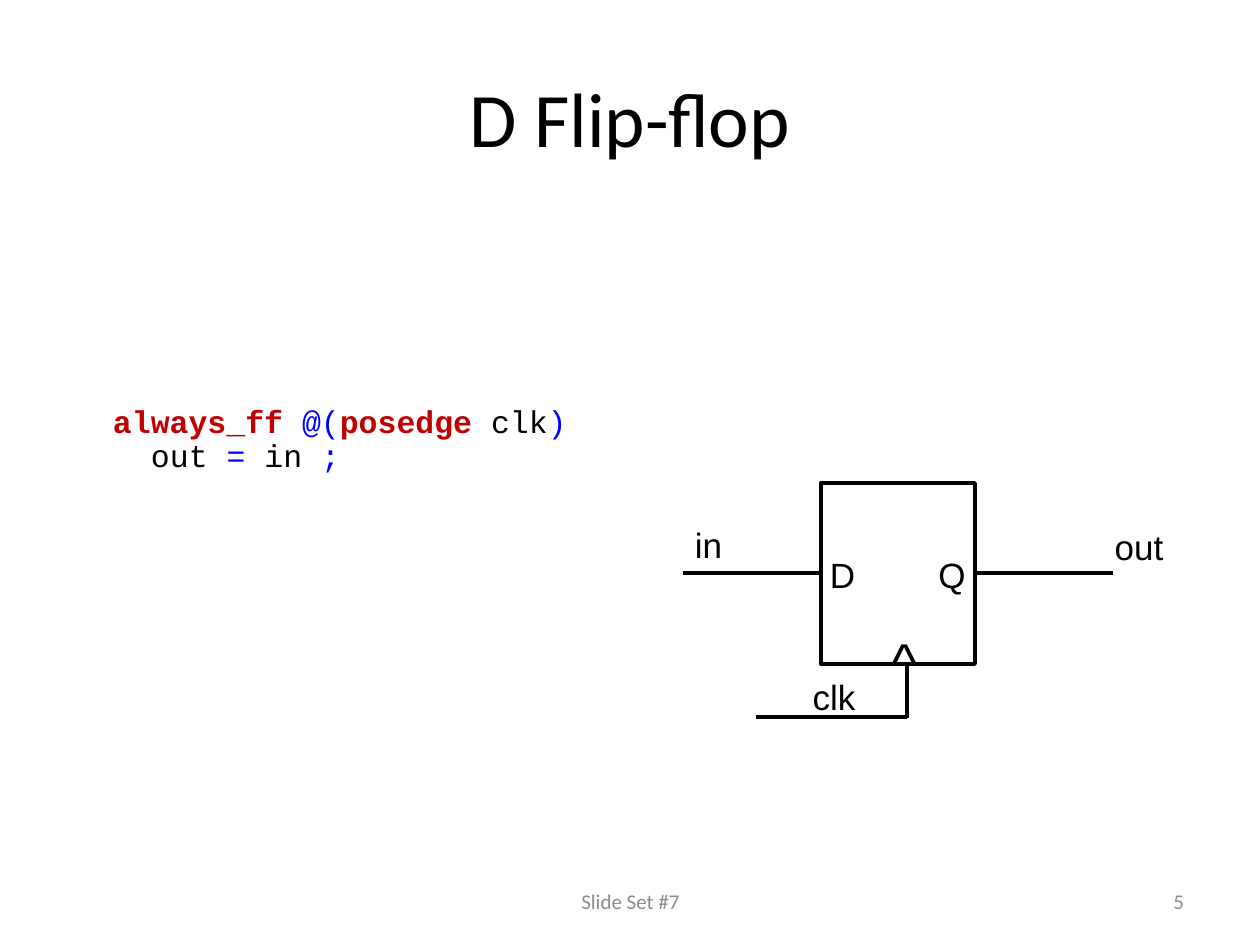
import pptx
import pptx.dml.color
import pptx.enum.shapes
import pptx.enum.text
import pptx.oxml.ns
import pptx.util
from lxml import etree

EMU_PER_PX = 914400 / 126
BLACK, RED, BLUE, GREY = "000000", "C00000", "0000FF", "8C8C8C"
ALIGN = pptx.enum.text.PP_ALIGN
ANCHOR = pptx.enum.text.MSO_ANCHOR


def px(n):
    return pptx.util.Emu(round(n * EMU_PER_PX))


def rgb(code):
    return pptx.dml.color.RGBColor.from_string(code)


def style_font(font, name, size, color, bold=False):
    font.name, font.size, font.bold = name, pptx.util.Pt(size), bold
    font.color.rgb = rgb(color)


def style_line(line):
    line.color.rgb = rgb(BLACK)
    line.width = pptx.util.Pt(2.25)


def add_frame(shapes, x, y, w, h, anchor=ANCHOR.MIDDLE, wrap=True):
    """Add an empty text box without insets and return its text frame."""
    tf = shapes.add_textbox(px(x), px(y), px(w), px(h)).text_frame
    tf.margin_left = tf.margin_right = tf.margin_top = tf.margin_bottom = 0
    tf.vertical_anchor, tf.word_wrap = anchor, wrap
    return tf


def add_label(shapes, box, text, size, font="Arial", color=BLACK,
              align=ALIGN.CENTER, wrap=True):
    tf = add_frame(shapes, *box, wrap=wrap)
    tf.text = text
    p = tf.paragraphs[0]
    p.alignment = align
    style_font(p.runs[0].font, font, size, color)


def add_wire(shapes, x1, y1, x2, y2):
    line = shapes.add_connector(pptx.enum.shapes.MSO_CONNECTOR.STRAIGHT,
                                px(x1), px(y1), px(x2), px(y2))
    style_line(line.line)
    etree.SubElement(line._element.spPr, pptx.oxml.ns.qn("a:effectLst"))


def add_code(s, x, y, w, h):
    lines = [
        (0, [("always_ff ", RED), ("@(", BLUE), ("posedge ", RED),
             ("clk", BLACK), (")", BLUE)]),
        (38, [("out ", BLACK), ("=", BLUE), (" in ", BLACK), (";", BLUE)]),
    ]
    tf = add_frame(s.shapes, x, y, w, h, ANCHOR.TOP, wrap=False)
    for i, (indent, tokens) in enumerate(lines):
        p = tf.add_paragraph() if i else tf.paragraphs[0]
        p.line_spacing = 0.9
        p._p.get_or_add_pPr().set("marL", str(px(indent)))
        for text, color in tokens:
            r = p.add_run()
            r.text = text
            style_font(r.font, "Courier New", 18, color, bold=color == RED)


def add_flip_flop(s, x, y, w, h):
    """Draw the register body in the given box, with its pins and wires."""
    shapes = s.shapes.add_group_shape().shapes
    sp = shapes.add_shape(pptx.enum.shapes.MSO_SHAPE.RECTANGLE,
                          px(x), px(y), px(w), px(h))
    sp.shadow.inherit = False
    sp.fill.background()
    style_line(sp.line)

    pins = [("D", 9, 70, 25, 42, 20), ("Q", 117, 70, 28, 42, 20),
            ("^", 71, 145, 26, 67, 32)]
    for text, dx, dy, pw, ph, size in pins:
        add_label(shapes, (x + dx, y + dy, pw, ph), text, size, wrap=False)

    mid, clk_x, clk_y, lead = y + h // 2, x + 86, y + h + 53, 138
    add_wire(shapes, x - lead, mid, x, mid)
    add_wire(shapes, x + w, mid, x + w + lead, mid)
    add_wire(shapes, clk_x, y + h, clk_x, clk_y + 1)
    add_wire(shapes, clk_x, clk_y, x - 65, clk_y)

    signals = [("clk", -24, 192, 74), ("in", -128, 40, 31),
               ("out", 284, 42, 68)]
    for text, dx, dy, sw in signals:
        add_label(shapes, (x + dx, y + dy, sw, 43), text, 20)


def add_footer(s, x, y, w, h):
    add_label(s.shapes, (x + 368, y, 399, h), "Slide Set #7", 12,
              "Calibri", GREY)
    add_label(s.shapes, (x + w - 294, y, 281, h), "5", 12,
              "Calibri", GREY, ALIGN.RIGHT)


def main():
    prs = pptx.Presentation()
    prs.slide_width, prs.slide_height = px(1260), px(945)
    s = prs.slides.add_slide(prs.slide_layouts[6])
    add_label(s.shapes, (63, 38, 1134, 158), "D Flip-flop", 44, "Calibri")
    add_code(s, 113, 406, 456, 68)
    add_flip_flop(s, 821, 483, 154, 181)
    add_footer(s, 63, 876, 1134, 50)
    prs.save("out.pptx")


if __name__ == "__main__":
    main()
